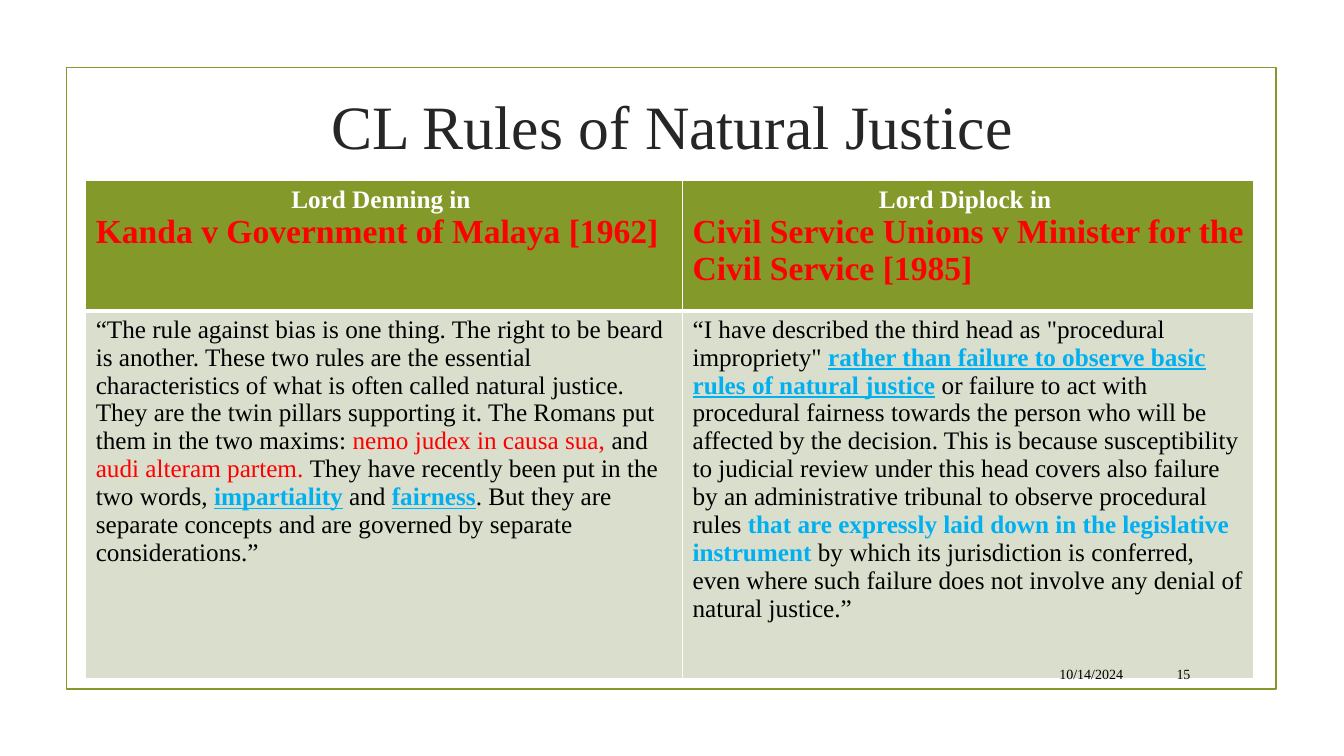
from lxml.etree import SubElement as Sub
from pptx import Presentation
from pptx.dml.color import RGBColor as Rgb
from pptx.enum.shapes import MSO_SHAPE as Shape
from pptx.enum.text import MSO_ANCHOR as Anchor, MSO_AUTO_SIZE as Fit, PP_ALIGN as Align
from pptx.oxml.ns import qn
from pptx.util import Cm, Pt

HUES = {"green": "83992A", "pale": "D9DECD", "white": "FFFFFF", "dark": "262626",
        "black": "000000", "red": "FF0000", "blue": "00B0F0"}
FACE = "Times New Roman"
RED = {"hue": "red"}
BOLD = {"hue": "blue", "bold": True}
LINED = {**BOLD, "line": True}

HEADS = [("Lord Denning in ", "Kanda v Government of Malaya [1962]"),
         ("Lord Diplock in ", "Civil Service Unions v Minister for the Civil Service [1985]")]
QUOTES = [
    [("“The rule against bias is one thing. The right to be beard is another. These two rules "
      "are the essential characteristics of what is often called natural justice. They are the "
      "twin pillars supporting it. The Romans put them in the two maxims: ", {}),
     ("nemo judex in causa sua,", RED),
     (" and ", {}),
     ("audi alteram partem. ", RED),
     ("They have recently been put in the two words, ", {}),
     ("impartiality", LINED),
     (" and ", {}),
     ("fairness", LINED),
     (". But they are separate concepts and are governed by separate considerations.”", {})],
    [("“I have described the third head as \"procedural impropriety\" ", {}),
     ("rather than failure to observe basic rules of natural justice", LINED),
     (" or failure to act with procedural fairness towards the person who will be affected by "
      "the decision. This is because susceptibility to judicial review under this head covers "
      "also failure by an administrative tribunal to observe procedural rules ", {}),
     ("that are expressly laid down in the legislative instrument", BOLD),
     (" by which its jurisdiction is conferred, even where such failure does not involve any "
      "denial of natural justice.”", {})],
]


def tint(name):
    return Rgb.from_string(HUES[name])


def write(para, text, size=18, hue="black", bold=False, line=False, align=Align.LEFT):
    para.alignment = align
    run = para.add_run()
    run.text = text
    font = run.font
    font.name, font.size = FACE, Pt(size)
    font.bold, font.underline = bold, line
    font.color.rgb = tint(hue)


def frame(slide, x, y, w, h):
    rect = slide.shapes.add_shape(Shape.RECTANGLE, Cm(x), Cm(y), Cm(w), Cm(h))
    rect.shadow.inherit = False
    rect.fill.background()
    rect.line.color.rgb = tint("green")
    rect.line.width = Pt(1.25)


def title(slide, x, y, w, h):
    box = slide.shapes.title
    box.left, box.top, box.width, box.height = Cm(x), Cm(y), Cm(w), Cm(h)
    text = box.text_frame
    text.auto_size = Fit.NONE
    text.vertical_anchor = Anchor.MIDDLE
    write(text.paragraphs[0], "CL Rules of Natural Justice", size=44, hue="dark",
          align=Align.CENTER)


def paint(cell, hue, top, base):
    props = cell._tc.get_or_add_tcPr()
    for side, wide in (("L", 1), ("R", 1), ("T", top), ("B", base)):
        edge = Sub(props, qn(f"a:ln{side}"), w=str(Pt(wide)))
        Sub(Sub(edge, qn("a:solidFill")), qn("a:srgbClr"), val=HUES["white"])
    cell.fill.solid()
    cell.fill.fore_color.rgb = tint(hue)


def cases(slide, x, y, w, h):
    left, head = 15.04, 3.28
    grid = slide.shapes.add_table(2, 2, Cm(x), Cm(y), Cm(w), Cm(h)).table
    grid.horz_banding = False
    for col, wide in zip(grid.columns, (left, w - left)):
        col.width = Cm(wide)
    for row, high in zip(grid.rows, (head, h - head)):
        row.height = Cm(high)
    for i, ((judge, case), quote) in enumerate(zip(HEADS, QUOTES)):
        top, body = grid.cell(0, i), grid.cell(1, i)
        paint(top, "green", 1, 3)
        paint(body, "pale", 3, 1)
        text = top.text_frame
        write(text.paragraphs[0], judge, hue="white", bold=True, align=Align.CENTER)
        write(text.add_paragraph(), case, size=24, hue="red", bold=True)
        for part, style in quote:
            write(body.text_frame.paragraphs[0], part, **style)


def footer(slide, x, y, w, h):
    date, page = 4.45, 1.5
    for text, left, wide in (("10/14/2024", x, date), ("15", x + w - page, page)):
        box = slide.shapes.add_textbox(Cm(left), Cm(y), Cm(wide), Cm(h)).text_frame
        box.word_wrap = True
        box.vertical_anchor = Anchor.MIDDLE
        write(box.paragraphs[0], text, size=10, align=Align.RIGHT)


def main():
    deck = Presentation()
    deck.slide_width, deck.slide_height = Cm(33.87), Cm(19.05)
    slide = deck.slides.add_slide(deck.slide_layouts[5])
    frame(slide, 1.68, 1.7, 30.48, 15.67)
    title(slide, 3.61, 1.98, 26.67, 2.34)
    cases(slide, 2.16, 4.55, 29.44, 12.55)
    footer(slide, 24.1, 16.59, 6.15, 0.79)
    deck.save("out.pptx")


if __name__ == "__main__":
    main()
